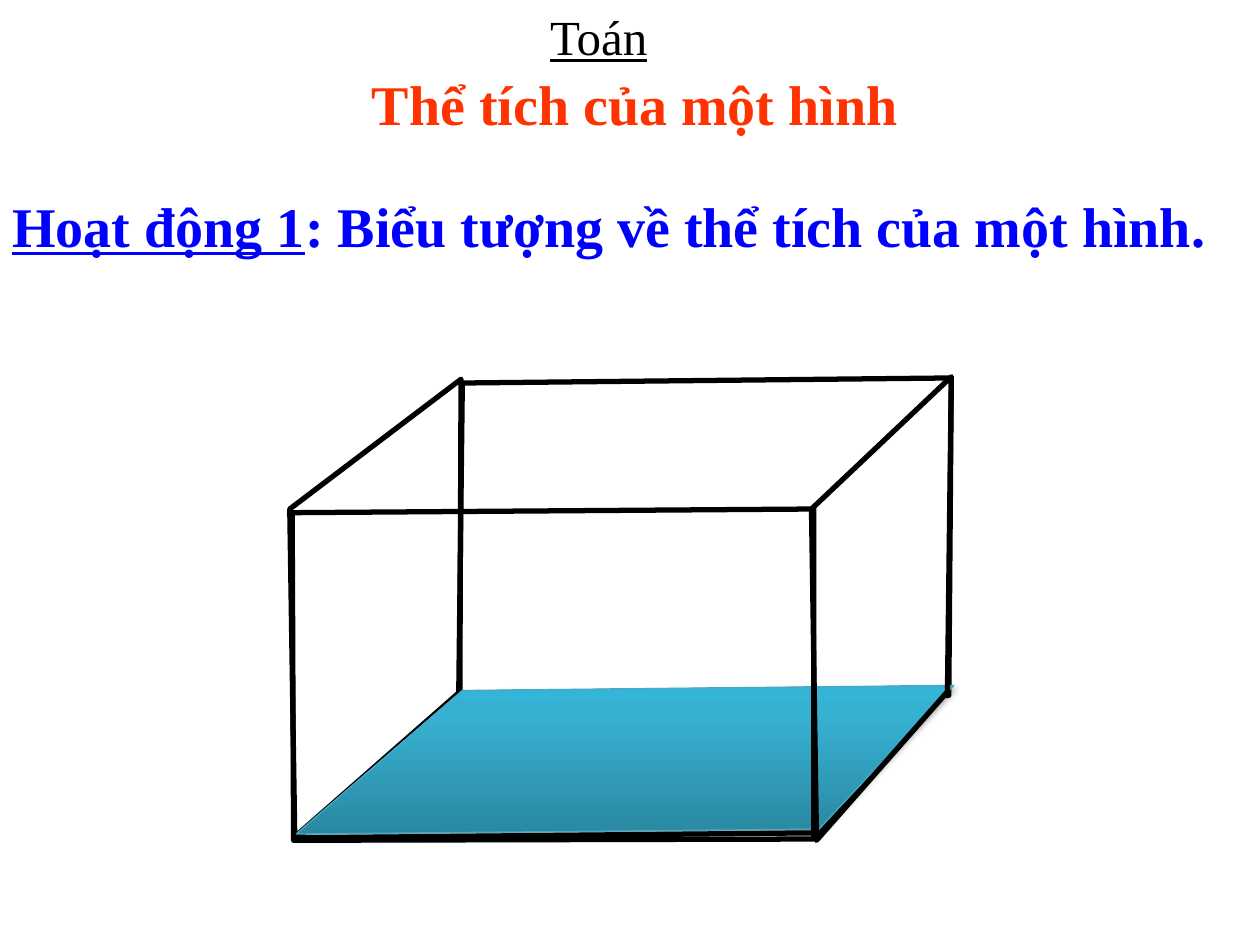
"""Build the slide on the volume of a solid, with an open box and water on its floor."""
from lxml import etree
from pptx import Presentation
from pptx.dml.color import RGBColor
from pptx.enum.text import MSO_AUTO_SIZE, PP_ALIGN
from pptx.oxml.ns import qn
from pptx.util import Pt

CENTER, LEFT = PP_ALIGN.CENTER, PP_ALIGN.LEFT
FIT_SHAPE = MSO_AUTO_SIZE.SHAPE_TO_FIT_TEXT
BLACK = RGBColor(0x00, 0x00, 0x00)
ORANGE = RGBColor(0xFF, 0x33, 0x00)
BLUE = RGBColor(0x00, 0x00, 0xFF)
WATER_EDGE = RGBColor(0x46, 0xAA, 0xC5)
WATER_DEEP = RGBColor(0x2A, 0x88, 0xA2)
WATER_MID = RGBColor(0x37, 0xB1, 0xD2)
WATER_TOP = RGBColor(0x34, 0xB4, 0xD6)

prs = Presentation()
prs.slide_width, prs.slide_height = Pt(720), Pt(540)
slide = prs.slides.add_slide(prs.slide_layouts[6])


def add_face(corners, color, width):
    points = [(Pt(x), Pt(y)) for x, y in corners]
    builder = slide.shapes.build_freeform(*points[0])
    builder.add_line_segments(points[1:], close=True)
    face = builder.convert_to_shape()
    face.shadow.inherit = False
    face.fill.background()
    face.line.color.rgb = color
    face.line.width = Pt(width)
    return face


def add_heading(box, runs, size, color, bold, align=LEFT, indent=7.2):
    heading = slide.shapes.add_textbox(*[Pt(length) for length in box])
    frame = heading.text_frame
    frame.word_wrap = True
    frame.auto_size = FIT_SHAPE
    frame.margin_left = Pt(indent)
    paragraph = frame.paragraphs[0]
    paragraph.alignment = align
    for words, underlined in runs:
        run = paragraph.add_run()
        run.text = words
        run.font.name = "Times New Roman"
        run.font.size = Pt(size)
        run.font.bold = bold
        run.font.underline = underlined
        run.font.color.rgb = color


left_side = [(165.6, 290.9), (263.5, 216.7), (262.8, 397.4), (168.5, 480.2)]
back_side = [(262.1, 400.3), (542.2, 397.4), (543.6, 216), (264.2, 218.9)]
floor = [(167.8, 478.8), (262.1, 396), (542.2, 393.1), (468.7, 475.9)]
water_surface = [(169.2, 476.6), (264.2, 394.6), (545, 391.7), (468, 473.8)]
front_side = [(167.8, 480.2), (465.1, 479.5), (465.1, 290.9), (167, 293)]
right_side = [(463.7, 290.9), (543.6, 215.3), (541.4, 395.3), (466.6, 480.2)]

for side in (left_side, back_side, floor):
    add_face(side, BLACK, 3)

water = add_face(water_surface, WATER_EDGE, 0.75)
water.fill.gradient()
water.fill.gradient_angle = 90
stop_list = water._element.spPr.find(qn("a:gradFill")).find(qn("a:gsLst"))
stop_list.clear()
for position, color in ((0, WATER_DEEP), (80, WATER_MID), (100, WATER_TOP)):
    stop = etree.SubElement(stop_list, qn("a:gs"), pos=str(position * 1000))
    etree.SubElement(stop, qn("a:srgbClr"), val=str(color))
effects = water._element.spPr.find(qn("a:effectLst"))
shadow = etree.SubElement(effects, qn("a:outerShdw"), blurRad=str(Pt(3.1)),
                          dist=str(Pt(1.8)), dir="5400000", rotWithShape="0")
shade = etree.SubElement(shadow, qn("a:srgbClr"), val=str(BLACK))
etree.SubElement(shade, qn("a:alpha"), val="35000")

for side in (front_side, right_side):
    add_face(side, BLACK, 3)

add_heading((185.8, 36, 354.2, 46.1), [("Thể tích của một hình", False)],
            32, ORANGE, True, CENTER)
add_heading((300.2, 0, 95.8, 41), [("Toán", True)], 28, BLACK, False, indent=14.2)
add_heading((0, 105.8, 720, 85),
            [("Hoạt động 1", True), (": Biểu tượng về thể tích của một hình.", False)],
            32, BLUE, True)

prs.save("out.pptx")
